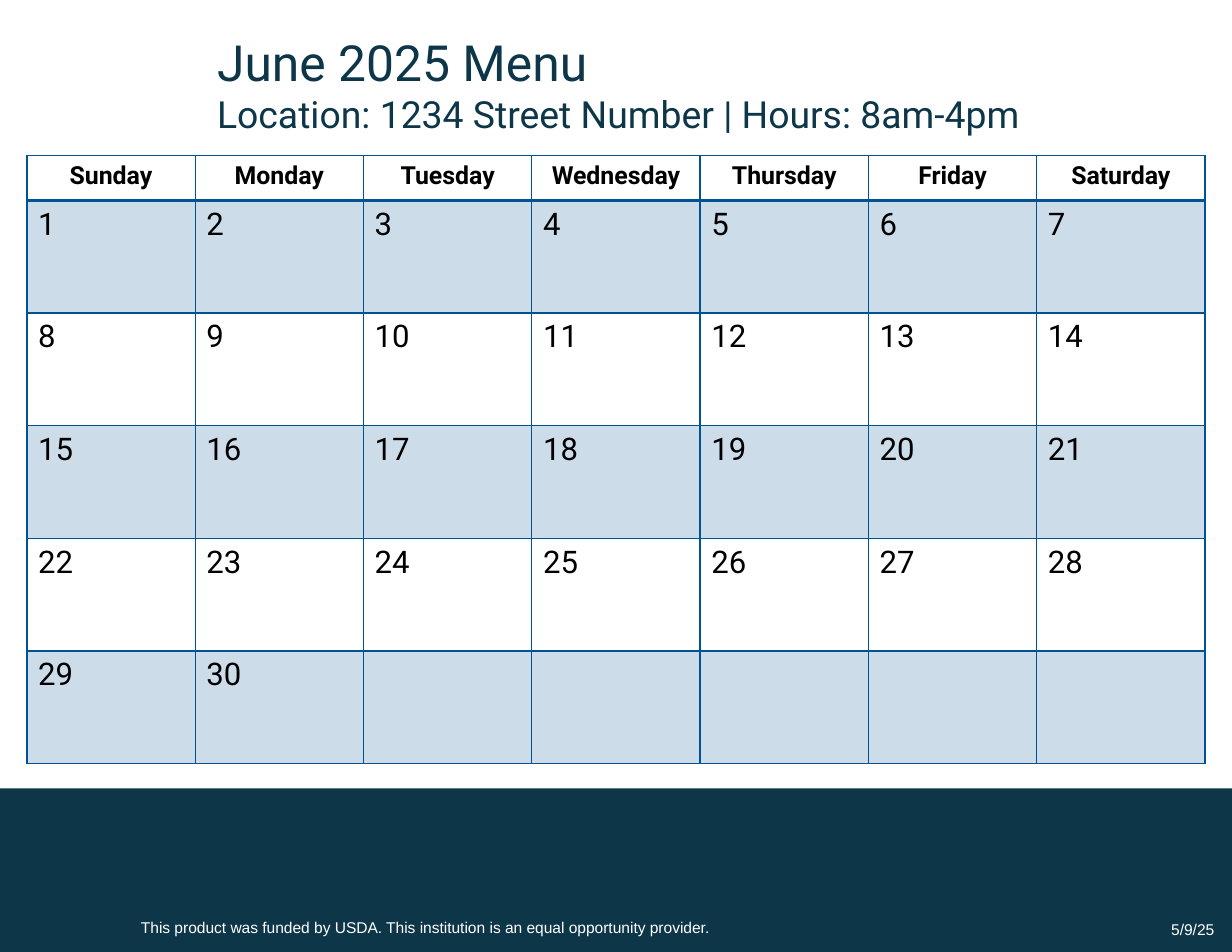
from lxml import etree
from pptx import Presentation
from pptx.dml.color import RGBColor
from pptx.enum.shapes import MSO_SHAPE
from pptx.enum.text import MSO_ANCHOR, PP_ALIGN
from pptx.oxml.ns import qn
from pptx.util import Inches, Pt

RECT = MSO_SHAPE.RECTANGLE
TOP, MIDDLE = MSO_ANCHOR.TOP, MSO_ANCHOR.MIDDLE
LEFT, CENTER, RIGHT = PP_ALIGN.LEFT, PP_ALIGN.CENTER, PP_ALIGN.RIGHT

TITLE = "June 2025 Menu"
PLACE = "Location: 1234 Street Number | Hours: 8am-4pm"
NOTICE = ("This product was funded by USDA. "
          "This institution is an equal opportunity provider.")
DATE = "5/9/25"
DAYS = ["Sunday", "Monday", "Tuesday", "Wednesday",
        "Thursday", "Friday", "Saturday"]
WEEKS, LAST = 5, 30

THEME = {
    "navy": "0D3649", "blue": "005392", "black": "000000", "white": "FFFFFF",
    "main": "Roboto", "small": "Arial",
    "title": 32, "place": 24, "day": 16, "date": 20, "foot": 10,
    "tint": 20,
}


def style(para, size, color, font="main", align=LEFT, bold=False):
    """Format every run of a paragraph."""
    para.alignment = align
    for run in para.runs:
        run.font.name = THEME[font]
        run.font.size = Pt(THEME[size])
        run.font.bold = bold
        run.font.color.rgb = RGBColor.from_string(THEME[color])


def add_text(slide, box, lines, color, font, align=LEFT, anchor=TOP):
    """Add a text box from (text, size) lines."""
    frame = slide.shapes.add_textbox(*map(Inches, box)).text_frame
    frame.word_wrap = True
    frame.vertical_anchor = anchor
    frame.text = "\n".join(text for text, _ in lines)
    for para, (_, size) in zip(frame.paragraphs, lines):
        style(para, size, color, font, align)


def paint(cell, tinted):
    """Give a cell a pale tint or no fill."""
    if not tinted:
        cell.fill.background()
        return
    cell.fill.solid()
    cell.fill.fore_color.rgb = RGBColor.from_string(THEME["blue"])
    color = cell._tc.tcPr.find(".//" + qn("a:srgbClr"))
    etree.SubElement(color, qn("a:alpha"), val=str(THEME["tint"] * 1000))


def frame_cell(cell, widths):
    """Draw the left, right, top and bottom borders of a cell."""
    props = cell._tc.get_or_add_tcPr()
    for spot, (side, width) in enumerate(zip("LRTB", widths)):
        line = etree.Element(qn("a:ln" + side), w=str(Pt(width)))
        fill = etree.SubElement(line, qn("a:solidFill"))
        etree.SubElement(fill, qn("a:srgbClr"), val=THEME["blue"])
        props.insert(spot, line)


def add_month(slide, left, top, width, height, head):
    """Add the calendar table with a header row."""
    cols = len(DAYS)
    table = slide.shapes.add_table(
        WEEKS + 1, cols, *map(Inches, (left, top, width, height))).table
    for col in table.columns:
        col.width = Inches(width / cols)
    for i, row in enumerate(table.rows):
        row.height = Inches(head if i == 0 else (height - head) / WEEKS)
        for j, cell in enumerate(row.cells):
            date = (i - 1) * cols + j + 1
            if i == 0:
                cell.text = DAYS[j]
                style(cell.text_frame.paragraphs[0], "day", "black",
                      align=CENTER, bold=True)
            else:
                cell.text = str(date) if date <= LAST else ""
                style(cell.text_frame.paragraphs[0], "date", "black")
            paint(cell, i % 2 == 1)
            frame_cell(cell, (1, 1, 2 if i == 1 else 1, 2 if i == 0 else 1))


def main():
    """Build the menu calendar slide."""
    deck = Presentation()
    deck.slide_width, deck.slide_height = Inches(11), Inches(8.5)
    slide = deck.slides.add_slide(deck.slide_layouts[6])

    band = slide.shapes.add_shape(
        RECT, *map(Inches, (0, 7.04, 11, 1.46)))
    band.shadow.inherit = False
    band.fill.solid()
    band.fill.fore_color.rgb = RGBColor.from_string(THEME["navy"])
    band.line.fill.background()

    add_text(slide, (1.16, 8.15, 7.08, 0.27), [(NOTICE, "foot")],
             "white", "small")
    add_text(slide, (8.47, 8.07, 2.47, 0.45), [(DATE, "foot")],
             "white", "small", RIGHT, MIDDLE)
    add_text(slide, (1.84, 0.23, 7.75, 1.04),
             [(TITLE, "title"), (PLACE, "place")], "navy", "main")
    add_month(slide, 0.24, 1.39, 10.52, 5.43, 0.4)
    deck.save("out.pptx")


if __name__ == "__main__":
    main()
